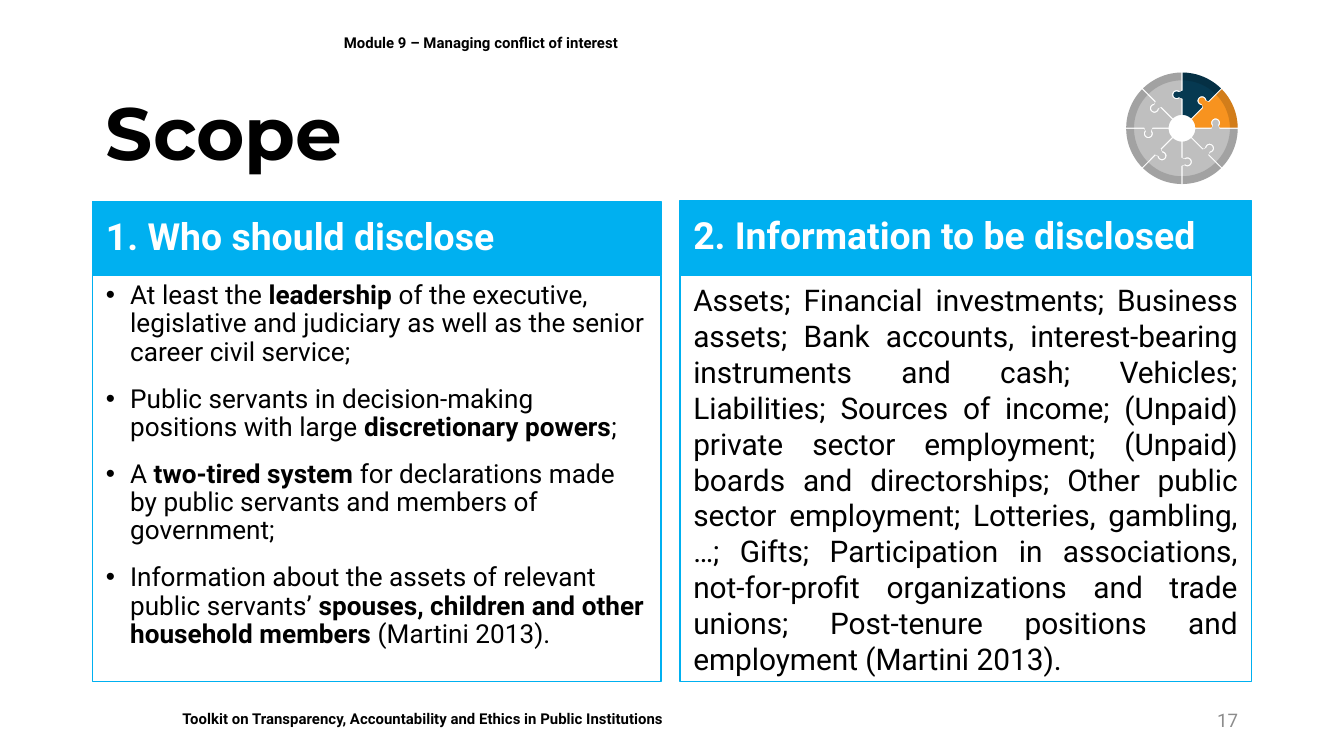
import math
from dataclasses import dataclass

import pptx
import pptx.dml.color
import pptx.enum.shapes
import pptx.enum.text
import pptx.oxml
import pptx.oxml.ns
import pptx.util

Inches = pptx.util.Inches
RGB = pptx.dml.color.RGBColor.from_string
ALIGN = pptx.enum.text.PP_ALIGN
ANCHOR = pptx.enum.text.MSO_ANCHOR
RECTANGLE = pptx.enum.shapes.MSO_SHAPE.RECTANGLE
NAMESPACE = pptx.oxml.ns.nsdecls("a")


@dataclass(frozen=True)
class Theme:
    heading_font: str = "Montserrat"
    body_font: str = "Roboto"
    bullet_font: str = "Arial"
    ink: str = "000000"
    paper: str = "FFFFFF"
    accent: str = "00B0F0"
    muted: str = "8C8C8C"
    piece: str = "BFBFBF"
    navy: str = "063951"
    orange: str = "F7931F"
    rim_alpha: int = 15000
    title_size: float = 39.6
    heading_size: float = 20
    detail_size: float = 16
    bullet_size: float = 14
    number_size: float = 10
    label_size: float = 8


THEME = Theme()

WHO_DISCLOSES = [
    ["At least the ", "leadership ",
     "of the executive, legislative and judiciary as well as the senior career civil service;"],
    ["Public servants in decision-making positions with large ", "discretionary powers", ";"],
    ["A ", "two-tired system ", "for declarations made by public servants and members of government;"],
    ["Information about the assets of relevant public servants’ ",
     "spouses, children and other household members", " (Martini 2013)."],
]
INFORMATION = (
    "Assets; Financial investments; Business assets; Bank accounts, interest-bearing instruments and cash; "
    "Vehicles; Liabilities; Sources of income; (Unpaid) private sector employment; (Unpaid) boards and "
    "directorships; Other public sector employment; Lotteries, gambling, …; Gifts; Participation in "
    "associations, not-for-profit organizations and trade unions; Post-tenure positions and employment "
    "(Martini 2013)."
)


def add_panel(slide, box, fill=None, line=None, anchor=ANCHOR.TOP):
    panel = slide.shapes.add_shape(RECTANGLE, *map(Inches, box))
    panel.shadow.inherit = False
    if fill:
        panel.fill.solid()
        panel.fill.fore_color.rgb = RGB(fill)
    else:
        panel.fill.background()
    if line:
        panel.line.color.rgb = RGB(line)
        panel.line.width = pptx.util.Pt(0.75)
    else:
        panel.line.fill.background()
    panel.text_frame.word_wrap = True
    panel.text_frame.vertical_anchor = anchor
    return panel.text_frame


def style(paragraph, size, color=THEME.ink, bold=None, font=THEME.body_font, align=ALIGN.LEFT):
    paragraph.alignment = align
    paragraph.font.name = font
    paragraph.font.size = pptx.util.Pt(size)
    paragraph.font.color.rgb = RGB(color)
    paragraph.font.bold = bold


def add_label(slide, box, text, size, **look):
    label = slide.shapes.add_textbox(*map(Inches, box)).text_frame
    label.word_wrap = True
    label.vertical_anchor = ANCHOR.MIDDLE
    label.text = text
    style(label.paragraphs[0], size, **look)
    return label.paragraphs[0]


def add_column(slide, box, heading, heading_height):
    left, top, width, height = box
    header = add_panel(slide, (left, top, width, heading_height), THEME.accent, THEME.accent, ANCHOR.MIDDLE)
    header.text = heading
    header.paragraphs[0].line_spacing = 0.9
    style(header.paragraphs[0], THEME.heading_size, THEME.paper, True)
    return add_panel(slide, (left, top + heading_height, width, height - heading_height), line=THEME.accent)


def fill_bullets(body, items):
    body.margin_right = Inches(0.12)
    for index, item in enumerate(items):
        bullet = body.add_paragraph() if index else body.paragraphs[0]
        properties = bullet._p.get_or_add_pPr()
        properties.set("marL", str(Inches(0.18)))
        properties.set("indent", str(Inches(-0.18)))
        for mark in (f'buFont {NAMESPACE} typeface="{THEME.bullet_font}"', f'buChar {NAMESPACE} char="•"'):
            properties.append(pptx.oxml.parse_xml(f"<a:{mark}/>"))
        bullet.line_spacing = 0.9
        if index:
            bullet.space_before = pptx.util.Pt(10)
        style(bullet, THEME.bullet_size)
        for position, words in enumerate(item):
            run = bullet.add_run()
            run.text = words
            if position == 1:
                run.font.bold = True


def fill_details(body, text):
    body.text = text
    style(body.paragraphs[0], THEME.detail_size, align=ALIGN.JUSTIFY)


def add_outline(slide, points, color, alpha=None):
    corners = [(Inches(x), Inches(y)) for x, y in points]
    builder = slide.shapes.build_freeform(*corners[0])
    builder.add_line_segments(corners[1:], close=True)
    outline = builder.convert_to_shape()
    outline.shadow.inherit = False
    outline.line.fill.background()
    outline.fill.solid()
    outline.fill.fore_color.rgb = RGB(color)
    if alpha:
        tint = outline._element.spPr.find(".//" + pptx.oxml.ns.qn("a:srgbClr"))
        tint.append(pptx.oxml.parse_xml(f'<a:alpha {NAMESPACE} val="{alpha}"/>'))


def add_puzzle_wheel(slide, box, colors):
    left, top, size, _ = box
    outer = size / 2
    inner, rim, gap = outer * 0.24, outer * 0.86, 0.005
    center_x, center_y = left + outer, top + outer
    step = math.tau / len(colors)

    def place(angle, radius, offset):
        return (center_x + radius * math.sin(angle) - offset * math.cos(angle),
                center_y - radius * math.cos(angle) - offset * math.sin(angle))

    def knob_edge(angle, offset, knob):
        turns = [math.radians(degrees) for degrees in range(-130, 131, 20)]
        curve = [(0.25 + knob * math.sin(turn), 0.04 + knob * math.cos(turn)) for turn in turns]
        profile = [(inner, offset), (0.22, offset), *curve, (0.28, offset), (outer, offset)]
        return [place(angle, radius, shift) for radius, shift in profile]

    def arc(start, end, radius):
        inset = math.copysign(gap / radius, end - start)
        first, last = start + inset, end - inset
        return [place(first + (last - first) * i / 12, radius, 0) for i in range(13)]

    sectors = [(index * step, (index + 1) * step) for index in range(len(colors))]
    for (start, end), color in zip(sectors, colors):
        add_outline(slide, knob_edge(start, -gap, 0.024) + arc(start, end, outer)
                    + knob_edge(end, gap, 0.034)[::-1] + arc(end, start, inner), color)
    for start, end in sectors:
        add_outline(slide, arc(start, end, outer) + arc(end, start, rim), THEME.ink, THEME.rim_alpha)


def add_footer(slide, box, text, number):
    left, top, width, height = box
    toolkit = add_panel(slide, (left + 0.57, top + 0.02, 7.17, 0.24), THEME.paper)
    toolkit.text = text
    style(toolkit.paragraphs[0], THEME.label_size, bold=True)
    add_label(slide, (left + width - 2.25, top, 2.25, height), number, THEME.number_size,
              color=THEME.muted, align=ALIGN.RIGHT)


def build_scope_slide(deck):
    slide = deck.slides.add_slide(deck.slide_layouts[6])
    add_footer(slide, (0.69, 5.21, 8.62, 0.3),
               "Toolkit on Transparency, Accountability and Ethics in Public Institutions", "17")
    fill_bullets(add_column(slide, (0.69, 1.5, 4.23, 3.57), "1. Who should disclose", 0.55), WHO_DISCLOSES)
    fill_details(add_column(slide, (5.06, 1.49, 4.25, 3.58), "2. Information to be disclosed", 0.56), INFORMATION)
    add_label(slide, (2.46, 0.1, 6.85, 0.44), "Module 9 – Managing conflict of interest",
              THEME.label_size, bold=True)
    title = add_label(slide, (0.69, 0.64, 8.62, 0.75), "Scope", THEME.title_size,
                      bold=True, font=THEME.heading_font)
    title.line_spacing = 0.9
    add_puzzle_wheel(slide, (8.38, 0.54, 0.83, 0.83), [THEME.navy, THEME.orange] + [THEME.piece] * 6)


def main():
    deck = pptx.Presentation()
    deck.slide_width = Inches(10)
    deck.slide_height = deck.slide_width * 9 // 16
    build_scope_slide(deck)
    deck.save("out.pptx")


if __name__ == "__main__":
    main()
